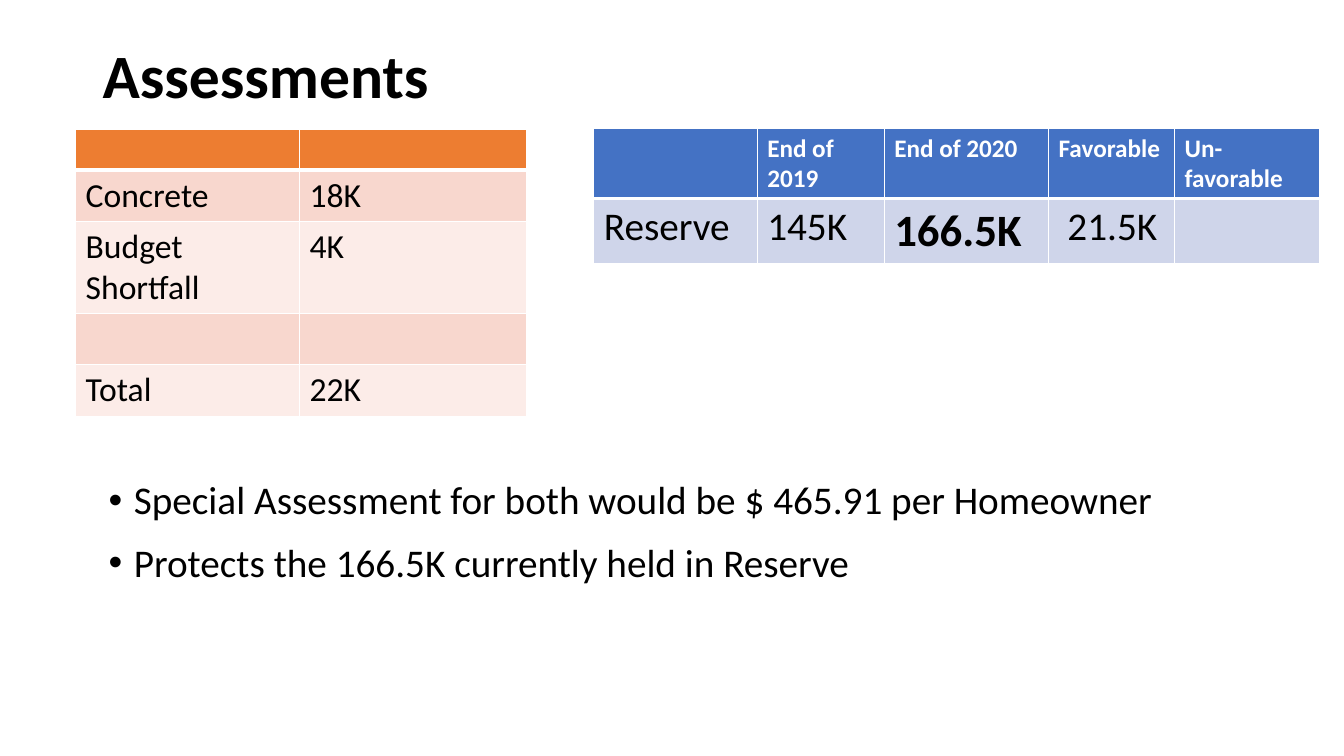
import pptx
import pptx.util
import pptx.dml.color
import pptx.enum.text
import pptx.oxml
import pptx.oxml.ns
import lxml.etree

Inches = pptx.util.Inches
Pt = pptx.util.Pt
RGBColor = pptx.dml.color.RGBColor
MSO_ANCHOR = pptx.enum.text.MSO_ANCHOR

BLACK = RGBColor(0x00, 0x00, 0x00)
WHITE = RGBColor(0xFF, 0xFF, 0xFF)
ORANGE = RGBColor(0xED, 0x7D, 0x31)
ORANGE_BANDS = [RGBColor(0xF8, 0xD7, 0xCE), RGBColor(0xFC, 0xEC, 0xE8)]
BLUE = RGBColor(0x44, 0x72, 0xC4)
BLUE_BANDS = [RGBColor(0xCF, 0xD5, 0xEA)]


def write(paragraph, text, size, bold=False, color=BLACK):
    run = paragraph.add_run()
    run.text = text
    for name, value in {"name": "Calibri", "size": Pt(size), "bold": bold}.items():
        setattr(run.font, name, value)
    run.font.color.rgb = color


def set_border(cell, side, width):
    properties = cell._tc.get_or_add_tcPr()
    line = lxml.etree.SubElement(
        properties, pptx.oxml.ns.qn("a:ln" + side), w=str(Pt(width)))
    fill = lxml.etree.SubElement(line, pptx.oxml.ns.qn("a:solidFill"))
    lxml.etree.SubElement(fill, pptx.oxml.ns.qn("a:srgbClr"), val=str(WHITE))


presentation = pptx.Presentation()
presentation.slide_width = Inches(13.33)
presentation.slide_height = Inches(7.5)
slide = presentation.slides.add_slide(presentation.slide_layouts[6])

heading = slide.shapes.add_textbox(
    Inches(0.92), Inches(0.05), Inches(11.5), Inches(1.45)).text_frame
for name, value in {"word_wrap": True, "vertical_anchor": MSO_ANCHOR.MIDDLE}.items():
    setattr(heading, name, value)
heading.paragraphs[0].line_spacing = 0.9
write(heading.paragraphs[0], "Assessments", 44, bold=True)

costs = {
    "place": (0.75, 1.28),
    "columns": [2.22, 2.25],
    "rows": [0.41, 0.51, 0.91, 0.51, 0.51],
    "header": ORANGE,
    "bands": ORANGE_BANDS,
    "size": 24,
    "texts": [["", ""], ["Concrete", "18K"], ["Budget Shortfall", "4K"],
              ["", ""], ["Total", "22K"]],
}
reserve = {
    "place": (5.89, 1.27),
    "columns": [1.62, 1.26, 1.63, 1.25, 1.44],
    "rows": [0.7, 0.64],
    "header": BLUE,
    "bands": BLUE_BANDS,
    "size": 28,
    "texts": [["", "End of 2019", "End of 2020", "Favorable", "Un-favorable"],
              ["Reserve", "145K", "166.5K", " 21.5K", ""]],
}

for content in (costs, reserve):
    left, top = content["place"]
    widths, heights = content["columns"], content["rows"]
    grid = slide.shapes.add_table(
        len(heights), len(widths), Inches(left), Inches(top),
        Inches(sum(widths)), Inches(sum(heights))).table
    for column, width in zip(grid.columns, widths):
        column.width = Inches(width)
    for row, height in zip(grid.rows, heights):
        row.height = Inches(height)
    for r, texts in enumerate(content["texts"]):
        for c, text in enumerate(texts):
            cell = grid.cell(r, c)
            for side in "LRTB":
                under_header = (r, side) in ((0, "B"), (1, "T"))
                set_border(cell, side, 3 if under_header else 1)
            bands = content["bands"]
            cell.fill.solid()
            cell.fill.fore_color.rgb = (
                content["header"] if r == 0 else bands[(r - 1) % len(bands)])
            if not text:
                continue
            paragraph = cell.text_frame.paragraphs[0]
            if r == 0:
                write(paragraph, text, 18, bold=True, color=WHITE)
            elif text == "166.5K":
                write(paragraph, text, 32, bold=True)
            else:
                write(paragraph, text, content["size"])

points = [
    (4.72, "Special Assessment for both would be $ 465.91 per Homeowner"),
    (5.34, "Protects the 166.5K currently held in Reserve"),
]
for top, text in points:
    point = slide.shapes.add_textbox(
        Inches(0.98), Inches(top), Inches(11.5), Inches(0.72)).text_frame
    point.word_wrap = True
    paragraph = point.paragraphs[0]
    for name, value in {"line_spacing": 0.9, "space_before": Pt(10)}.items():
        setattr(paragraph, name, value)
    properties = paragraph._p.get_or_add_pPr()
    properties.set("marL", str(Inches(0.25)))
    properties.set("indent", str(Inches(-0.25)))
    lxml.etree.SubElement(properties, pptx.oxml.ns.qn("a:buFont"), typeface="Arial")
    lxml.etree.SubElement(properties, pptx.oxml.ns.qn("a:buChar"), char="•")
    write(paragraph, text, 28)

presentation.save("out.pptx")
